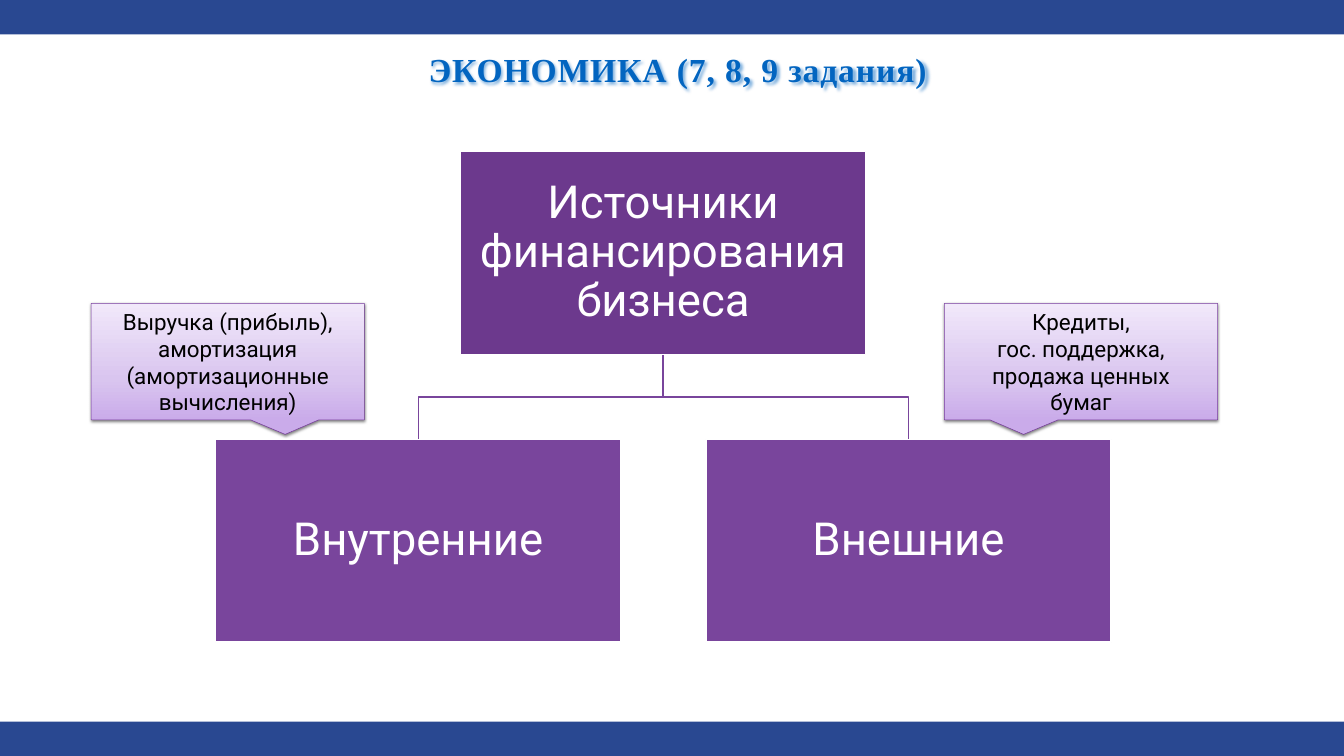
from pptx import Presentation
from pptx.util import Inches, Pt
from pptx.dml.color import RGBColor
from pptx.enum.shapes import MSO_SHAPE
from pptx.enum.text import PP_ALIGN, MSO_ANCHOR
from pptx.oxml import parse_xml
from pptx.oxml.ns import qn, nsdecls

NAVY = RGBColor(0x29, 0x48, 0x91)
BLUE = RGBColor(0x03, 0x65, 0xC0)
PLUM = RGBColor(0x6C, 0x39, 0x8D)
VIOLET = RGBColor(0x79, 0x45, 0x9C)
EDGE = RGBColor(0x75, 0x3B, 0x9A)
WHITE = RGBColor(0xFF, 0xFF, 0xFF)
BLACK = RGBColor(0, 0, 0)
STOPS = [(0, "CAABEA"), (35, "D9C5EF"), (100, "F1E8FA")]

deck = Presentation()
deck.slide_width, deck.slide_height = Inches(26.67), Inches(15)
slide = deck.slides.add_slide(deck.slide_layouts[6])
shapes = slide.shapes


def write(shape, text, size, color, inset, font="Roboto", spacing=None):
    frame = shape.text_frame
    frame.word_wrap = True
    frame.vertical_anchor = MSO_ANCHOR.MIDDLE
    frame.margin_left = frame.margin_right = Inches(inset)
    frame.margin_top = frame.margin_bottom = Inches(inset)
    frame.text = text
    for para in frame.paragraphs:
        para.alignment = PP_ALIGN.CENTER
        para.line_spacing = spacing
        for run in para.runs:
            run.font.size = Pt(size)
            run.font.name = font
            run.font.color.rgb = color


def add_shadow(shape, color, alpha, blur, dist, angle):
    shape._element.spPr.append(parse_xml(
        f'<a:effectLst {nsdecls("a")}><a:outerShdw blurRad="{Pt(blur)}" '
        f'dist="{Pt(dist)}" dir="{angle * 60000}" rotWithShape="0">'
        f'<a:srgbClr val="{color}"><a:alpha val="{alpha * 1000}"/></a:srgbClr>'
        '</a:outerShdw></a:effectLst>'))


# Bars along the top and bottom edges
for top in (-0.01, 14.32):
    bar = shapes.add_shape(MSO_SHAPE.RECTANGLE, 0, Inches(top),
                           deck.slide_width, Inches(0.69))
    bar.shadow.inherit = False
    bar.fill.solid()
    bar.fill.fore_color.rgb = NAVY
    bar.line.fill.background()

# Branches from the root to each child
wide, high = 8.04, 4.02
root_x, root_y, child_y = 9.14, 3.01, 8.72
child_xs = (4.28, 14.01)
mid, start = root_x + wide / 2, root_y + high
bend = (start + child_y) / 2
for left in reversed(child_xs):
    end = left + wide / 2
    path = shapes.build_freeform(Inches(mid), Inches(start))
    path.add_line_segments([(Inches(x), Inches(y)) for x, y in
                            ((mid, bend), (end, bend), (end, child_y))],
                           close=False)
    branch = path.convert_to_shape()
    branch.shadow.inherit = False
    branch.fill.background()
    branch.line.color.rgb = VIOLET
    branch.line.width = Pt(2)

# Boxes of the tree
for left, top, color, text in (
        (root_x, root_y, PLUM, "Источники финансирования бизнеса"),
        (child_xs[0], child_y, VIOLET, "Внутренние"),
        (child_xs[1], child_y, VIOLET, "Внешние")):
    box = shapes.add_shape(MSO_SHAPE.RECTANGLE, Inches(left), Inches(top),
                           Inches(wide), Inches(high))
    box.shadow.inherit = False
    box.fill.solid()
    box.fill.fore_color.rgb = color
    box.line.color.rgb = WHITE
    box.line.width = Pt(2)
    write(box, text, 65, WHITE, 0.05, spacing=0.9)

# Title with a thin outline and a soft shadow
title = shapes.add_textbox(Inches(8.18), Inches(0.95), Inches(10.55), Inches(0.85))
write(title, "ЭКОНОМИКА (7, 8, 9 задания)", 48, BLUE, 0.02, "Times New Roman")
run = title.text_frame.paragraphs[0].runs[0]
run.font.bold = True
props = run._r.get_or_add_rPr()
props.set("spc", "130")
props.insert(0, parse_xml(
    f'<a:ln {nsdecls("a")} w="{Pt(0.9)}"><a:solidFill>'
    '<a:srgbClr val="F4F5FA"/></a:solidFill></a:ln>'))
add_shadow(title, "0365C0", 50, 4, 3, 45)

# Callouts pointing down at the children
for left, tip, text in (
        (1.81, 0.21, "Выручка (прибыль),\nамортизация\n(амортизационные\nвычисления)"),
        (18.74, -0.21, "Кредиты,\nгос. поддержка,\nпродажа ценных\nбумаг")):
    note = shapes.add_shape(MSO_SHAPE.RECTANGULAR_CALLOUT, Inches(left),
                            Inches(6.02), Inches(5.42), Inches(2.31))
    note.adjustments[0] = tip
    note.adjustments[1] = 0.625
    note.fill.gradient()
    note.fill.gradient_angle = 90
    stops = note._element.spPr.find(qn("a:gradFill")).find(qn("a:gsLst"))
    for stop in list(stops):
        stops.remove(stop)
    for place, color in STOPS:
        stops.append(parse_xml(
            f'<a:gs {nsdecls("a")} pos="{place * 1000}">'
            f'<a:srgbClr val="{color}"/></a:gs>'))
    note.line.color.rgb = EDGE
    note.line.width = Pt(0.75)
    add_shadow(note, "000000", 50, 4, 2, 90)
    write(note, text, 32, BLACK, 0.08)

deck.save("out.pptx")
